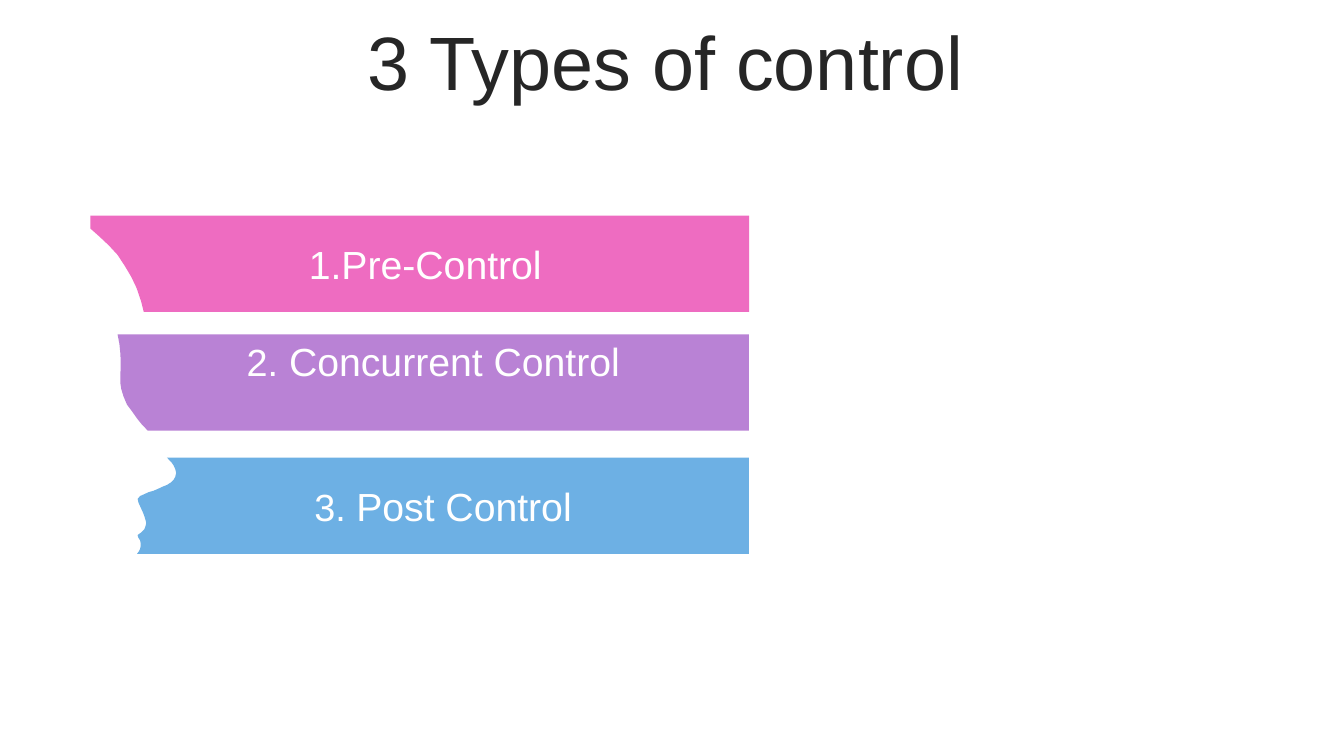
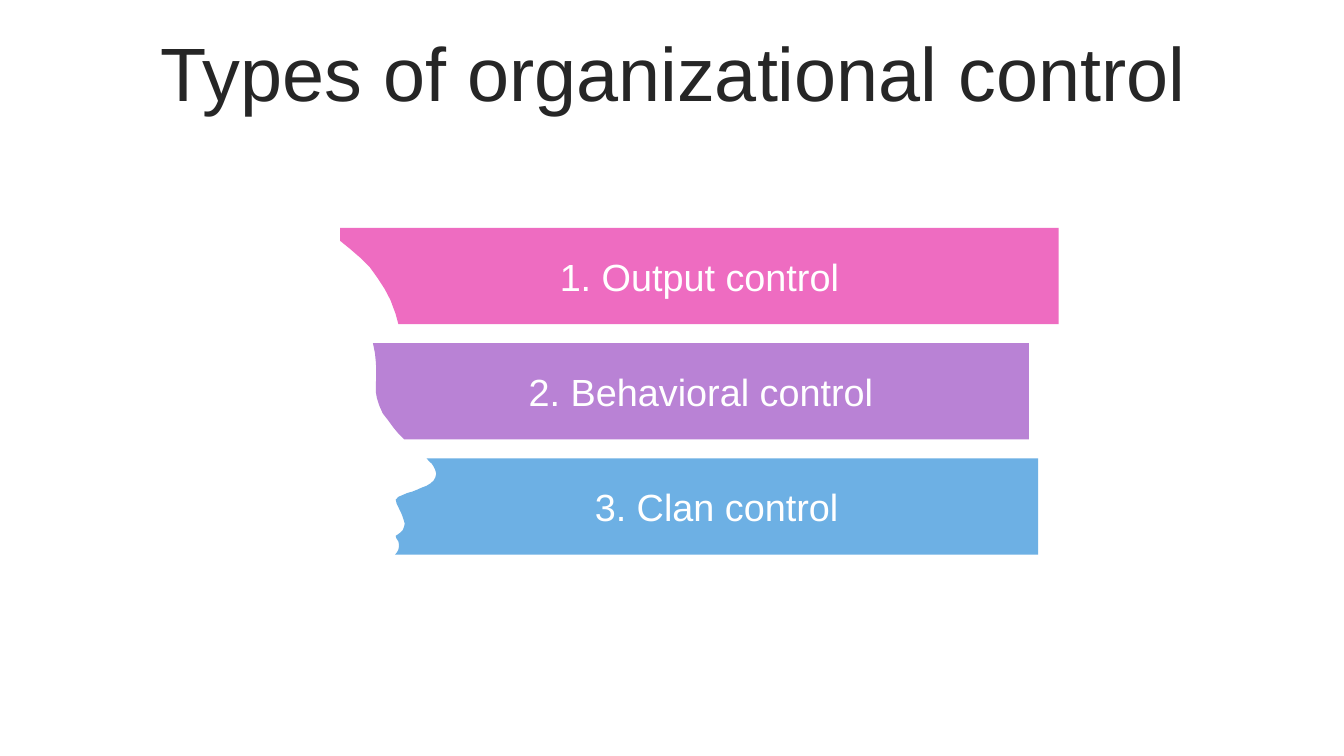
from pptx import Presentation
from pptx.util import Pt
from pptx.dml.color import RGBColor
from pptx.enum import text

FONT = "Arial"
INK, WHITE = "262626", "FFFFFF"
INSET = 7.2
BAND_HEIGHT = 68.8

# Torn left edges, bottom to top, in percent of band width and height
TEARS = [
    [(8.1, 100), (7.7, 89), (7, 75), (6.2, 63.5), (5.2, 52), (4.1, 40.6),
     (2.8, 31), (1.4, 22), (0, 13.5)],
    [(4.8, 100), (3.9, 94), (3.1, 87.5), (2.3, 80), (1.5, 73), (0.95, 64.6),
     (0.6, 57), (0.45, 51), (0.45, 44), (0.48, 36), (0.5, 28), (0.45, 20),
     (0.3, 10)],
    [(0, 100), (0.3, 97.5), (0.5, 95), (0.6, 92), (0.6, 89), (0.5, 86),
     (0.2, 83), (0.1, 80.5), (0.75, 77.5), (1.2, 74.5), (1.4, 71), (1.5, 68),
     (1.4, 65), (1.2, 61), (1, 57.5), (0.75, 54), (0.5, 50.5), (0.25, 47),
     (0.1, 43), (0.5, 40), (1.2, 38), (1.9, 36), (2.7, 34.5), (3.45, 32.5),
     (4.1, 30.5), (4.9, 28.5), (5.5, 26), (6, 23), (6.25, 20), (6.4, 16),
     (6.25, 12), (6, 8.5), (5.7, 5.5), (5.3, 3)],
]
TOP_STARTS = [0, 0, 4.9]
BAND_COLOURS = ["EE6CC1", "B982D5", "6DB0E4"]

# Title: text, left, top, extra left inset
# Band: left, right, top, extra left inset, extra bottom inset, runs (text, size)
PAGES = [
    (("3 Types of control", 12.2, 18.7, 15), [
        (64.6, 535, 154, 7.8, 0, [("1.Pre-Control", 28)]),
        (84, 535, 238.8, 0, 31, [("2.", 27), (" Concurrent Control", 28)]),
        (97.9, 535, 326.8, 0, 0, [("3. ", 27), ("Post Control", 28)]),
    ]),
    (("Types of organizational control", 25.2, 26.6, 0), [
        (243, 756.2, 162.8, 0, 0, [("1. Output control", 27)]),
        (266.4, 735, 245.1, 0, 0, [("2. Behavioral control", 27)]),
        (282.2, 741.6, 327.4, 0, 0, [("3. Clan control", 27)]),
    ]),
]


def colour(value):
    return RGBColor.from_string(value)


def write(box, runs, ink, left_extra=0, bottom_extra=0):
    frame = box.text_frame
    frame.word_wrap = True
    frame.vertical_anchor = text.MSO_ANCHOR.MIDDLE
    frame.margin_left = Pt(INSET + left_extra)
    frame.margin_bottom = Pt(INSET / 2 + bottom_extra)
    para = frame.paragraphs[0]
    para.alignment = text.PP_ALIGN.CENTER
    for words, size in runs:
        span = para.add_run()
        span.text = words
        span.font.name = FONT
        span.font.size = Pt(size)
        span.font.color.rgb = colour(ink)
    return para


deck = Presentation()
deck.slide_width, deck.slide_height = Pt(960), Pt(540)

for (title, title_left, title_top, title_extra), bands in PAGES:
    page = deck.slides.add_slide(deck.slide_layouts[6])

    # Title
    box = page.shapes.add_textbox(Pt(title_left), Pt(title_top), Pt(911.5), Pt(57))
    para = write(box, [(title, 54)], INK, title_extra)
    para.line_spacing = 0.9
    para.space_before = Pt(10)

    # Bands with a torn left edge
    for band, tear, start, fill in zip(bands, TEARS, TOP_STARTS, BAND_COLOURS):
        left, right, top, left_extra, bottom_extra, runs = band
        outline = [(start, 0), (100, 0), (100, 100)] + tear
        points = [(Pt(left + (right - left) * x / 100), Pt(top + BAND_HEIGHT * y / 100))
                  for x, y in outline]
        builder = page.shapes.build_freeform(*points[0])
        builder.add_line_segments(points[1:], close=True)
        shape = builder.convert_to_shape()
        shape.shadow.inherit = False
        shape.fill.solid()
        shape.fill.fore_color.rgb = colour(fill)
        shape.line.fill.background()
        write(shape, runs, WHITE, left_extra, bottom_extra)

deck.save("out.pptx")
